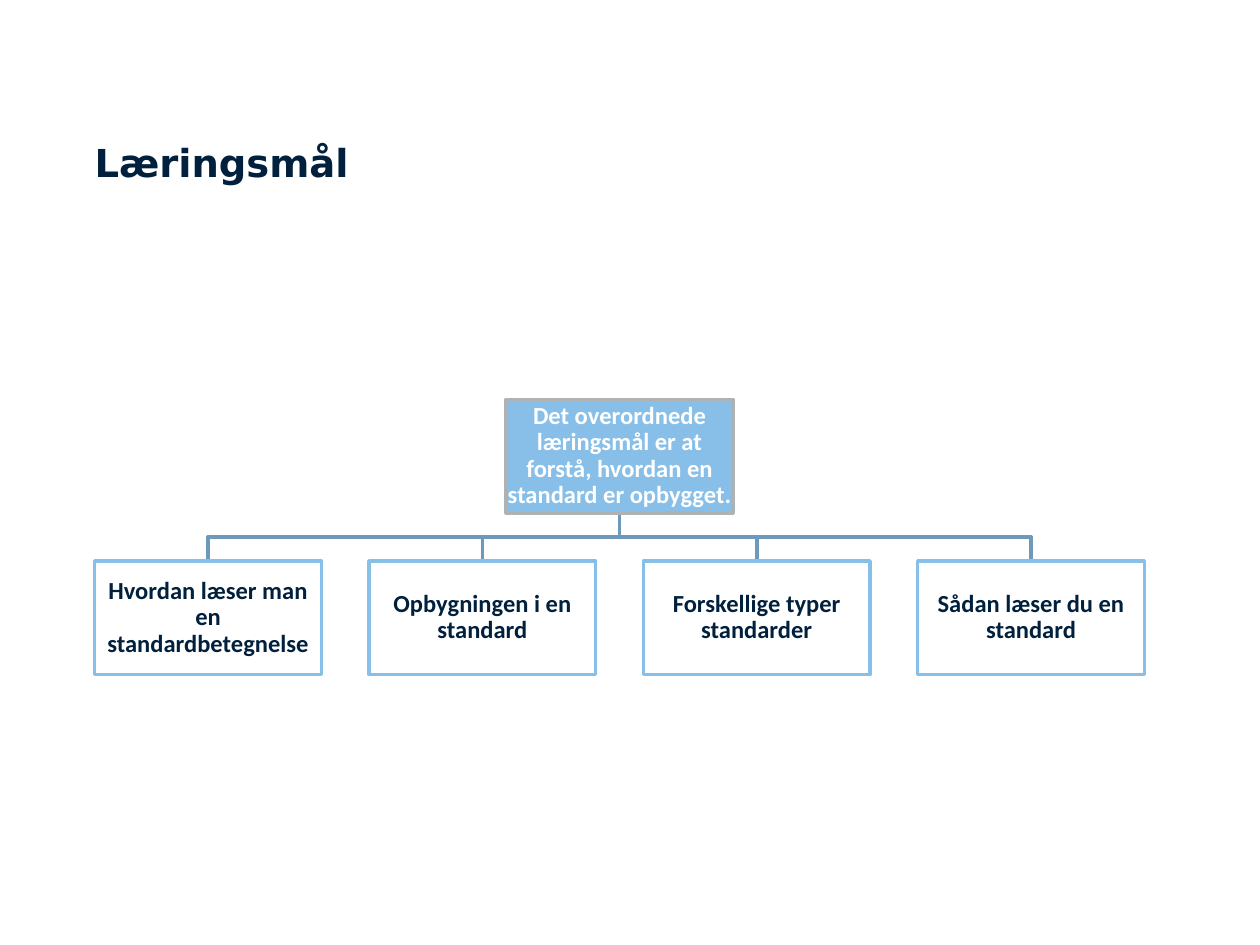
from dataclasses import dataclass

from pptx import Presentation
from pptx.dml.color import RGBColor
from pptx.enum.shapes import MSO_SHAPE
from pptx.enum.text import MSO_ANCHOR, PP_ALIGN
from pptx.shapes.autoshape import Shape
from pptx.slide import Slide
from pptx.text.text import TextFrame
from pptx.util import Cm, Pt

NAVY = RGBColor(0x00, 0x20, 0x3D)
SKY = RGBColor(0x88, 0xBF, 0xE8)
STEEL = RGBColor(0x6D, 0x99, 0xBA)
GREY = RGBColor(0xAE, 0xB2, 0xB2)
WHITE = RGBColor(0xFF, 0xFF, 0xFF)

BOX_WIDTH, BOX_HEIGHT = 4.57, 2.29
LEFT, PITCH = 1.91, 5.53
GOAL_TOP, TOPIC_TOP = 8.05, 11.31

TOPICS = [
    "Hvordan læser man en standardbetegnelse",
    "Opbygningen i en standard",
    "Forskellige typer standarder",
    "Sådan læser du en standard",
]


@dataclass(frozen=True)
class Node:
    text: str
    left: float
    top: float
    fill: RGBColor
    border: RGBColor
    ink: RGBColor

    @property
    def center(self) -> float:
        return self.left + BOX_WIDTH / 2

    @property
    def bottom(self) -> float:
        return self.top + BOX_HEIGHT


def set_margins(frame: TextFrame, margin: float) -> None:
    frame.margin_left = frame.margin_right = Cm(margin)
    frame.margin_top = frame.margin_bottom = Cm(margin)
    frame.word_wrap = True


def write(frame: TextFrame, text: str, font: str, size: int, color: RGBColor) -> None:
    span = frame.paragraphs[0].add_run()
    span.text = text
    span.font.name = font
    span.font.size = Pt(size)
    span.font.bold = True
    span.font.color.rgb = color


def set_outline(shape: Shape, color: RGBColor) -> None:
    shape.shadow.inherit = False
    shape.line.color.rgb = color
    shape.line.width = Pt(2)


def draw_title(page: Slide, text: str) -> None:
    title = page.shapes.title
    title.left, title.top = Cm(LEFT), Cm(2.8)
    title.width, title.height = Cm(21.5), Cm(2.05)
    frame = title.text_frame
    set_margins(frame, 0)
    frame.vertical_anchor = MSO_ANCHOR.TOP
    frame.paragraphs[0].alignment = PP_ALIGN.LEFT
    write(frame, text, "DejaVu Sans", 22, NAVY)


def draw_branch(page: Slide, parent: Node, child: Node) -> None:
    """Draw the bent line from the parent's bottom to the child's top."""
    middle = (parent.bottom + child.top) / 2
    builder = page.shapes.build_freeform(Cm(parent.center), Cm(parent.bottom))
    builder.add_line_segments(
        [
            (Cm(parent.center), Cm(middle)),
            (Cm(child.center), Cm(middle)),
            (Cm(child.center), Cm(child.top)),
        ],
        close=False,
    )
    branch = builder.convert_to_shape()
    branch.fill.background()
    set_outline(branch, STEEL)


def draw_node(page: Slide, node: Node) -> None:
    box = page.shapes.add_shape(
        MSO_SHAPE.RECTANGLE, Cm(node.left), Cm(node.top), Cm(BOX_WIDTH), Cm(BOX_HEIGHT)
    )
    box.fill.solid()
    box.fill.fore_color.rgb = node.fill
    set_outline(box, node.border)
    frame = box.text_frame
    set_margins(frame, 0.02)
    frame.vertical_anchor = MSO_ANCHOR.MIDDLE
    para = frame.paragraphs[0]
    para.alignment = PP_ALIGN.CENTER
    para.line_spacing = 0.9
    write(frame, node.text, "Calibri", 14, node.ink)


def main() -> None:
    deck = Presentation()
    deck.slide_width, deck.slide_height = Cm(25.4), Cm(19.05)
    page = deck.slides.add_slide(deck.slide_layouts[5])
    draw_title(page, "Læringsmål")

    goal = Node(
        "Det overordnede læringsmål er at forstå, hvordan en standard er opbygget.",
        LEFT + PITCH * (len(TOPICS) - 1) / 2, GOAL_TOP, SKY, GREY, WHITE,
    )
    topics = [
        Node(text, LEFT + PITCH * column, TOPIC_TOP, WHITE, SKY, NAVY)
        for column, text in enumerate(TOPICS)
    ]
    for topic in reversed(topics):
        draw_branch(page, goal, topic)
    for node in [goal, *topics]:
        draw_node(page, node)

    deck.save("out.pptx")


if __name__ == "__main__":
    main()
